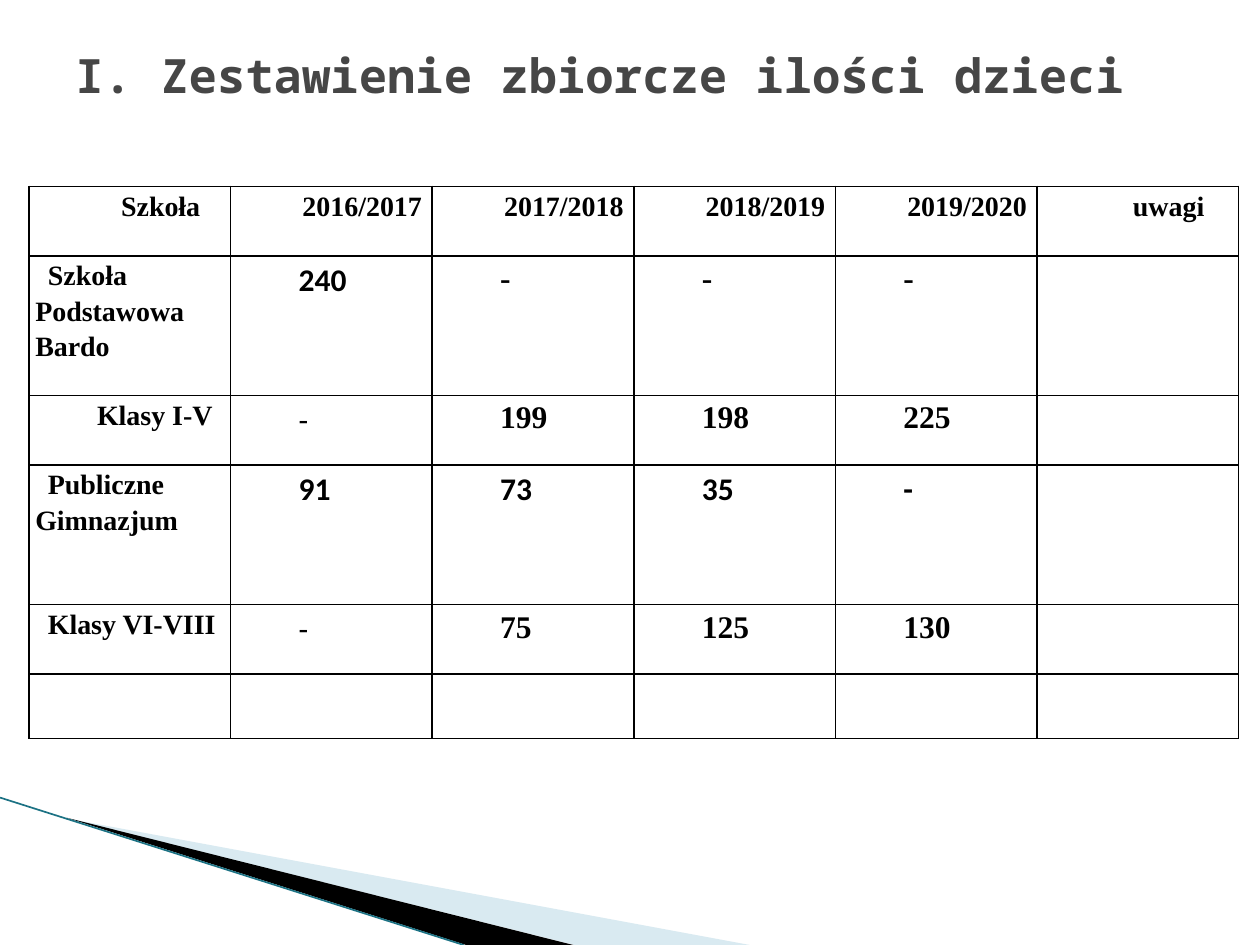
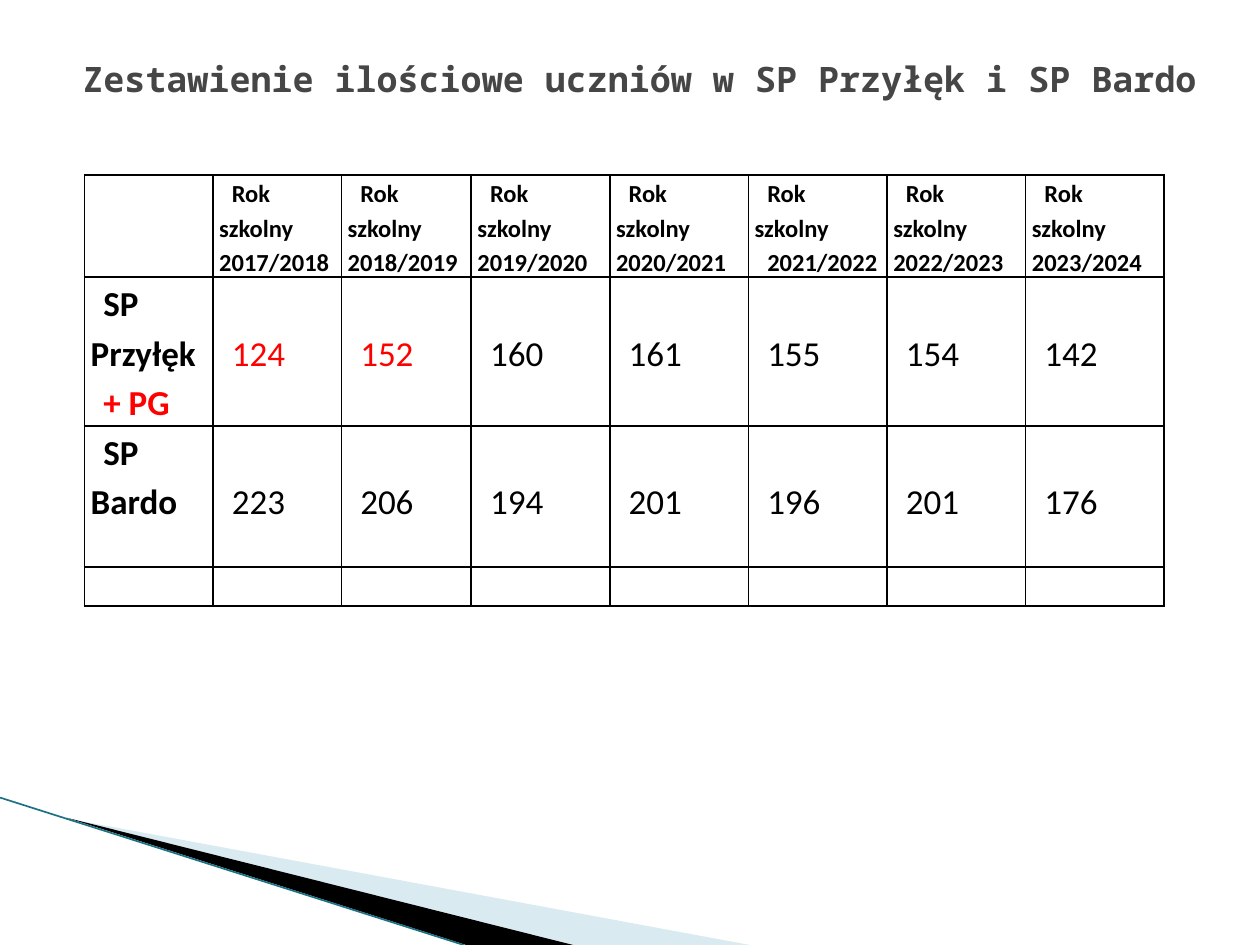
from dataclasses import dataclass, replace

from lxml import etree
from pptx import Presentation
from pptx.dml.color import RGBColor
from pptx.enum.shapes import MSO_CONNECTOR
from pptx.enum.text import MSO_ANCHOR, PP_ALIGN
from pptx.oxml.ns import qn
from pptx.util import Inches, Pt

LEFT, CENTER, JUSTIFY = PP_ALIGN.LEFT, PP_ALIGN.CENTER, PP_ALIGN.JUSTIFY
MIDDLE = MSO_ANCHOR.MIDDLE
STRAIGHT = MSO_CONNECTOR.STRAIGHT
BLANK_LAYOUT = 6


@dataclass(frozen=True)
class Theme:
    title_color: str = "464646"
    text_color: str = "000000"
    highlight: str = "FF0000"
    wedge_light: str = "A0CBDC"
    wedge_dark: str = "000000"
    edge_line: str = "1C7284"
    border: str = "000000"
    title_font: str = "Noto Sans Mono"
    serif: str = "Times New Roman"
    sans: str = "Calibri"
    title_size: int = 27
    long_title_size: int = 20
    label_size: int = 16
    value_size: int = 18
    year_size: int = 14
    pupil_size: int = 20
    line_spacing: float = 1.15


THEME = Theme()


@dataclass(frozen=True)
class TextStyle:
    font: str
    size: int
    bold: bool = True
    color: str = THEME.text_color
    align: PP_ALIGN = LEFT
    indent: float = 0.1
    top: float = 0


HEADER = TextStyle(THEME.serif, THEME.label_size, align=CENTER, indent=0.49)
SCHOOL = TextStyle(THEME.serif, THEME.label_size, align=JUSTIFY)
CLASSES = replace(SCHOOL, align=LEFT, indent=0.49)
SERIF_VALUE = TextStyle(THEME.serif, THEME.value_size, align=JUSTIFY, indent=0.49)
SANS_VALUE = replace(SERIF_VALUE, font=THEME.sans)
SANS_DASH = replace(SANS_VALUE, bold=False)
YEAR = TextStyle(THEME.sans, THEME.year_size)
PUPIL_LABEL = TextStyle(THEME.sans, THEME.pupil_size)
PUPILS = replace(PUPIL_LABEL, bold=False, top=0.39)
RED_PUPILS = replace(PUPILS, color=THEME.highlight)


def rgb(color):
    return RGBColor.from_string(color)


def format_runs(paragraph, font, size, bold, color):
    for run in paragraph.runs:
        run.font.name = font
        run.font.size = Pt(size)
        run.font.bold = bold
        run.font.color.rgb = rgb(color)


def add_wedge(slide, points, color, opacity=None):
    """Draw a filled polygon; opacity is a percentage."""
    corners = [(Inches(x), Inches(y)) for x, y in points]
    builder = slide.shapes.build_freeform(*corners[0])
    builder.add_line_segments(corners[1:], close=True)
    shape = builder.convert_to_shape()
    shape.shadow.inherit = False
    shape.line.fill.background()
    shape.fill.solid()
    shape.fill.fore_color.rgb = rgb(color)
    if opacity is not None:
        color_element = shape.fill._xPr.find(".//" + qn("a:srgbClr"))
        etree.SubElement(color_element, qn("a:alpha")).set("val", str(opacity * 1000))


def add_corner_decoration(slide):
    add_wedge(slide, [(0.55, 6.5), (5.95, 7.5), (4.56, 7.5)], THEME.wedge_light, 40)
    add_wedge(slide, [(0.53, 6.49), (4.55, 7.5), (3.7, 7.5)], THEME.wedge_dark)
    edge = slide.shapes.add_connector(
        STRAIGHT, Inches(0), Inches(6.33), Inches(3.68), Inches(7.5))
    edge.line.color.rgb = rgb(THEME.edge_line)
    edge.line.width = Pt(0.95)
    etree.SubElement(edge._element.spPr, qn("a:effectLst"))


def add_title(slide, text, box, size, align):
    shape = slide.shapes.add_textbox(*map(Inches, box))
    frame = shape.text_frame
    frame.word_wrap = True
    frame.vertical_anchor = MIDDLE
    frame.text = text
    paragraph = frame.paragraphs[0]
    paragraph.alignment = align
    format_runs(paragraph, THEME.title_font, size, True, THEME.title_color)


def set_borders(cell):
    properties = cell._tc.get_or_add_tcPr()
    for position, side in enumerate(("lnL", "lnR", "lnT", "lnB")):
        line = etree.Element(qn("a:" + side), w=str(Pt(1)))
        fill = etree.SubElement(line, qn("a:solidFill"))
        etree.SubElement(fill, qn("a:srgbClr")).set("val", THEME.border)
        properties.insert(position, line)


def write_cell(cell, text, style):
    cell.margin_top = Inches(style.top)
    cell.text_frame.text = text
    for paragraph in cell.text_frame.paragraphs:
        paragraph.alignment = style.align
        paragraph.line_spacing = THEME.line_spacing
        paragraph._p.get_or_add_pPr().set("indent", str(Inches(style.indent)))
        format_runs(paragraph, style.font, style.size, style.bold, style.color)


def add_grid(slide, left, top, widths, heights, rows):
    """Add a ruled table; each row is a list of (text, style), short rows end empty."""
    frame = slide.shapes.add_table(
        len(heights), len(widths), Inches(left), Inches(top),
        Inches(sum(widths)), Inches(sum(heights)))
    table = frame.table
    table.first_row = table.horz_banding = False
    for column, width in zip(table.columns, widths):
        column.width = Inches(width)
    for row, height in zip(table.rows, heights):
        row.height = Inches(height)
    for cell in table.iter_cells():
        cell.margin_left = cell.margin_right = Inches(0.05)
        cell.margin_top = cell.margin_bottom = 0
        cell.fill.background()
        set_borders(cell)
    for row_index, row in enumerate(rows):
        for column_index, (text, style) in enumerate(row):
            if text:
                write_cell(table.cell(row_index, column_index), text, style)
    return table


def styled(texts, style):
    return [(text, style) for text in texts]


def add_slide(presentation):
    slide = presentation.slides.add_slide(presentation.slide_layouts[BLANK_LAYOUT])
    add_corner_decoration(slide)
    return slide


def build_children_summary(presentation):
    slide = add_slide(presentation)
    add_title(slide, "I. Zestawienie zbiorcze ilości dzieci",
              (0.5, 0.17, 9, 0.85), THEME.title_size, LEFT)
    years = [f"{year}/{year + 1}" for year in range(2016, 2020)]
    rows = [
        styled(["Szkoła", *years, "uwagi"], HEADER),
        [("Szkoła Podstawowa Bardo", SCHOOL), ("240", SANS_VALUE),
         *styled("---", SERIF_VALUE)],
        [("Klasy I-V", CLASSES), ("-", SANS_DASH),
         *styled(["199", "198", "225"], SERIF_VALUE)],
        [("Publiczne Gimnazjum", SCHOOL), *styled(["91", "73", "35", "-"], SANS_VALUE)],
        [("Klasy VI-VIII", SCHOOL), ("-", SANS_DASH),
         *styled(["75", "125", "130"], SERIF_VALUE)],
    ]
    add_grid(slide, 0.23, 1.48, [1.6] * 6, [0.55, 1.11, 0.55, 1.11, 0.55, 0.51], rows)


def build_school_comparison(presentation):
    slide = add_slide(presentation)
    add_title(slide, "Zestawienie ilościowe uczniów w SP Przyłęk i SP Bardo",
              (0.28, 0.3, 9.6, 0.64), THEME.long_title_size, CENTER)
    headings = [f"Rok szkolny {year}/{year + 1}" for year in range(2017, 2024)]
    headings[4] = "Rok szkolny\n2021/2022"
    rows = [
        styled(["", *headings], YEAR),
        [("SP Przyłęk\n+ PG", PUPIL_LABEL), *styled(["124", "152"], RED_PUPILS),
         *styled(["160", "161", "155", "154", "142"], PUPILS)],
        [("SP Bardo", PUPIL_LABEL),
         *styled(["223", "206", "194", "201", "196", "201", "176"], PUPILS)],
    ]
    table = add_grid(slide, 0.67, 1.39, [1.02, 1.02, 1.03] + [1.1] * 5,
                     [0.81, 1.18, 1.12, 0.31], rows)
    gymnasium = table.cell(1, 0).text_frame.paragraphs[1]
    gymnasium.runs[0].font.color.rgb = rgb(THEME.highlight)


def main():
    presentation = Presentation()
    presentation.slide_width = Inches(10)
    presentation.slide_height = Inches(7.5)
    build_children_summary(presentation)
    build_school_comparison(presentation)
    presentation.save("out.pptx")


if __name__ == "__main__":
    main()
